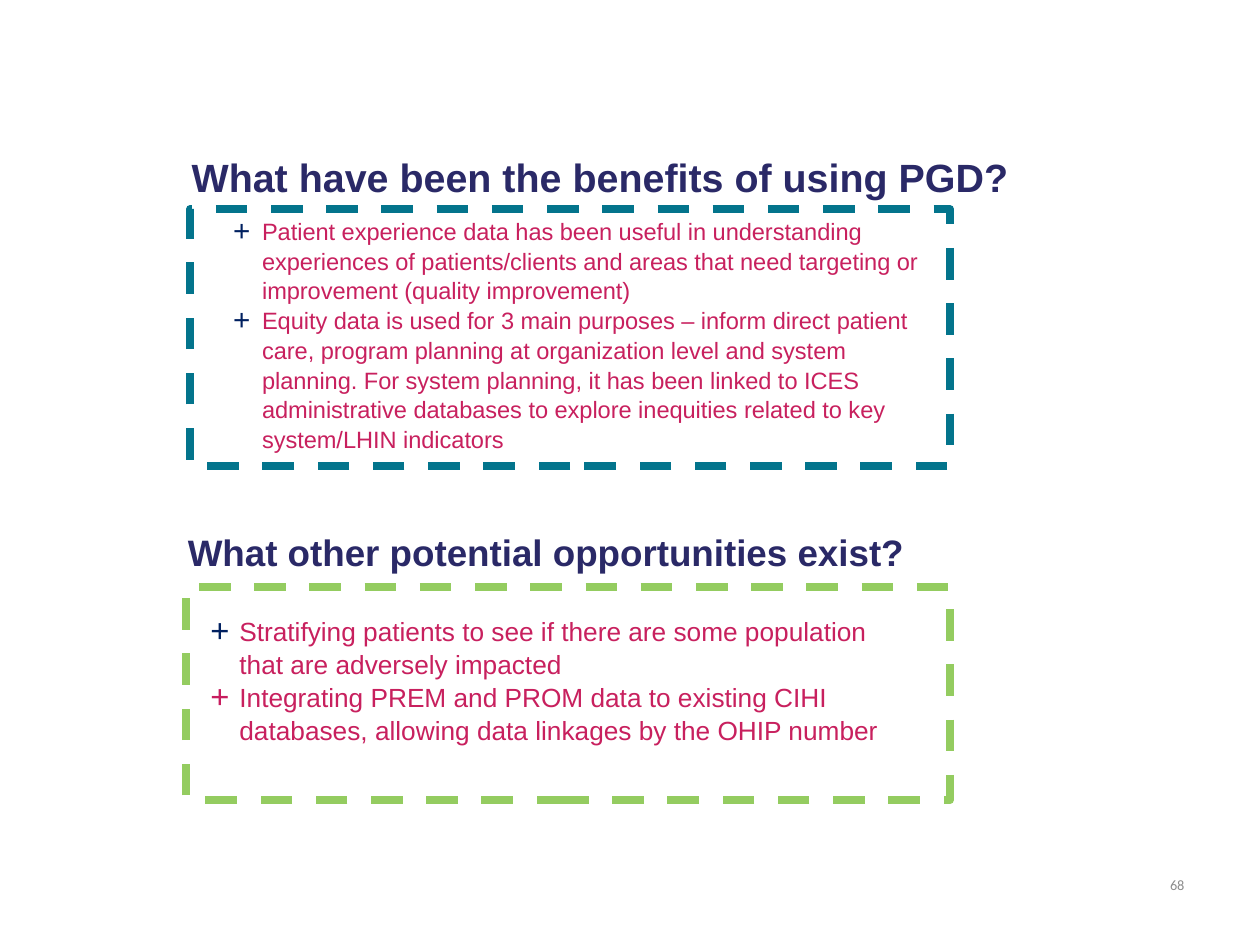
import pptx
import pptx.dml.color
import pptx.enum.dml
import pptx.enum.shapes
import pptx.enum.text
import pptx.oxml
import pptx.oxml.ns
import pptx.util

COLORS = {
    "white": "FFFFFF",
    "heading": "2A2967",
    "body": "C8205E",
    "bullet": "002060",
    "accent": "C81D5F",
    "teal": "03748C",
    "green": "94CC60",
    "gray": "8C8C8C",
}
COLUMNS, ROWS = 100, 75
ALIGN = pptx.enum.text.PP_ALIGN
ANCHOR = pptx.enum.text.MSO_ANCHOR


def rgb(name):
    return pptx.dml.color.RGBColor.from_string(COLORS[name])


def write(para, text, size, color, font="Arial", bold=False, align=ALIGN.LEFT, spacing=1.0):
    para.alignment = align
    para.space_before = para.space_after = pptx.util.Pt(0)
    para.line_spacing = spacing
    span = para.add_run()
    span.text = text
    span.font.size = pptx.util.Pt(size)
    span.font.name = font
    span.font.bold = bold
    span.font.color.rgb = rgb(color)


def add_bullet(para, color):
    properties = para._p.get_or_add_pPr()
    indent = pptx.util.Inches(0.23)
    properties.set("marL", str(indent))
    properties.set("indent", str(-indent))
    namespace = pptx.oxml.ns.nsdecls("a")
    for markup in (
        f'<a:buClr {namespace}><a:srgbClr val="{COLORS[color]}"/></a:buClr>',
        f'<a:buSzPct {namespace} val="125000"/>',
        f'<a:buFont {namespace} typeface="Arial"/>',
        f'<a:buChar {namespace} char="+"/>',
    ):
        properties.append(pptx.oxml.parse_xml(markup))


class Page:
    def __init__(self, deck, layout):
        self.deck = deck
        self.slide = deck.slides.add_slide(deck.slide_layouts[layout])
        self.holders = {holder.placeholder_format.idx: holder for holder in self.slide.placeholders}

    def area(self, left, top, width, height):
        column = self.deck.slide_width / COLUMNS
        row = self.deck.slide_height / ROWS
        return [round(n) for n in (left * column, top * row, width * column, height * row)]

    def place(self, holder, area, anchor, inset=(0.1, 0.05)):
        holder.left, holder.top, holder.width, holder.height = self.area(*area)
        frame = holder.text_frame
        frame.word_wrap = True
        frame.auto_size = pptx.enum.text.MSO_AUTO_SIZE.NONE
        frame.vertical_anchor = anchor
        frame.margin_left = frame.margin_right = pptx.util.Inches(inset[0])
        frame.margin_top = frame.margin_bottom = pptx.util.Inches(inset[1])
        return frame

    def heading(self, key, text, area, size, inset=(0.1, 0.05)):
        frame = self.place(self.holders[key], area, ANCHOR.MIDDLE, inset)
        write(frame.paragraphs[0], text, size, "heading", bold=True)

    def bullets(self, key, items, area, size):
        frame = self.place(self.holders[key], area, ANCHOR.TOP)
        for number, (text, color) in enumerate(items):
            para = frame.add_paragraph() if number else frame.paragraphs[0]
            write(para, text, size, "body", spacing=1.05)
            add_bullet(para, color)

    def dashed_panel(self, area, color):
        panel = self.slide.shapes.add_shape(
            pptx.enum.shapes.MSO_SHAPE.RECTANGLE, *self.area(*area)
        )
        panel.shadow.inherit = False
        panel.fill.solid()
        panel.fill.fore_color.rgb = rgb("white")
        panel.line.color.rgb = rgb(color)
        panel.line.width = pptx.util.Pt(4.5)
        panel.line.dash_style = pptx.enum.dml.MSO_LINE.DASH
        self.slide.shapes._spTree.insert(2, panel._element)

    def number(self, text, area):
        box = self.slide.shapes.add_textbox(*self.area(*area))
        frame = self.place(box, area, ANCHOR.MIDDLE)
        write(frame.paragraphs[0], text, 8.2, "gray", font="Calibri", align=ALIGN.RIGHT)

    def remove_empty(self):
        for holder in self.holders.values():
            if not holder.text_frame.text:
                holder._element.getparent().remove(holder._element)


def main():
    deck = pptx.Presentation()
    deck.slide_width = pptx.util.Inches(10)
    deck.slide_height = pptx.util.Inches(7.5)
    page = Page(deck, 4)

    page.dashed_panel((15.1, 16.6, 60.3, 20.4), "teal")
    page.dashed_panel((14.8, 46.6, 60.6, 16.9), "green")

    page.heading(0, "What have been the benefits of using PGD?", (14.2, 10.5, 70.8, 7.1), 22.5)
    page.bullets(2, [
        ("Patient experience data has been useful in understanding experiences of "
         "patients/clients and areas that need targeting or improvement "
         "(quality improvement)", "bullet"),
        ("Equity data is used for 3 main purposes – inform direct patient care, program "
         "planning at organization level and system planning. For system planning, it has "
         "been linked to ICES administrative databases to explore inequities related to "
         "key system/LHIN indicators", "bullet"),
    ], (17.5, 16.6, 56.8, 19.2), 13.5)

    page.heading(3, "What other potential opportunities exist?", (14.2, 40.2, 59.2, 7.2), 21,
                 inset=(0.07, 0.04))
    page.bullets(4, [
        ("Stratifying patients to see if there are some population that are adversely "
         "impacted", "bullet"),
        ("Integrating PREM and PROM data to existing CIHI databases, allowing data "
         "linkages by the OHIP number", "accent"),
    ], (15.7, 48.2, 56.3, 13.1), 15)

    page.number("68", (89.4, 68.2, 5.6, 4))
    page.remove_empty()
    deck.save("out.pptx")


if __name__ == "__main__":
    main()
